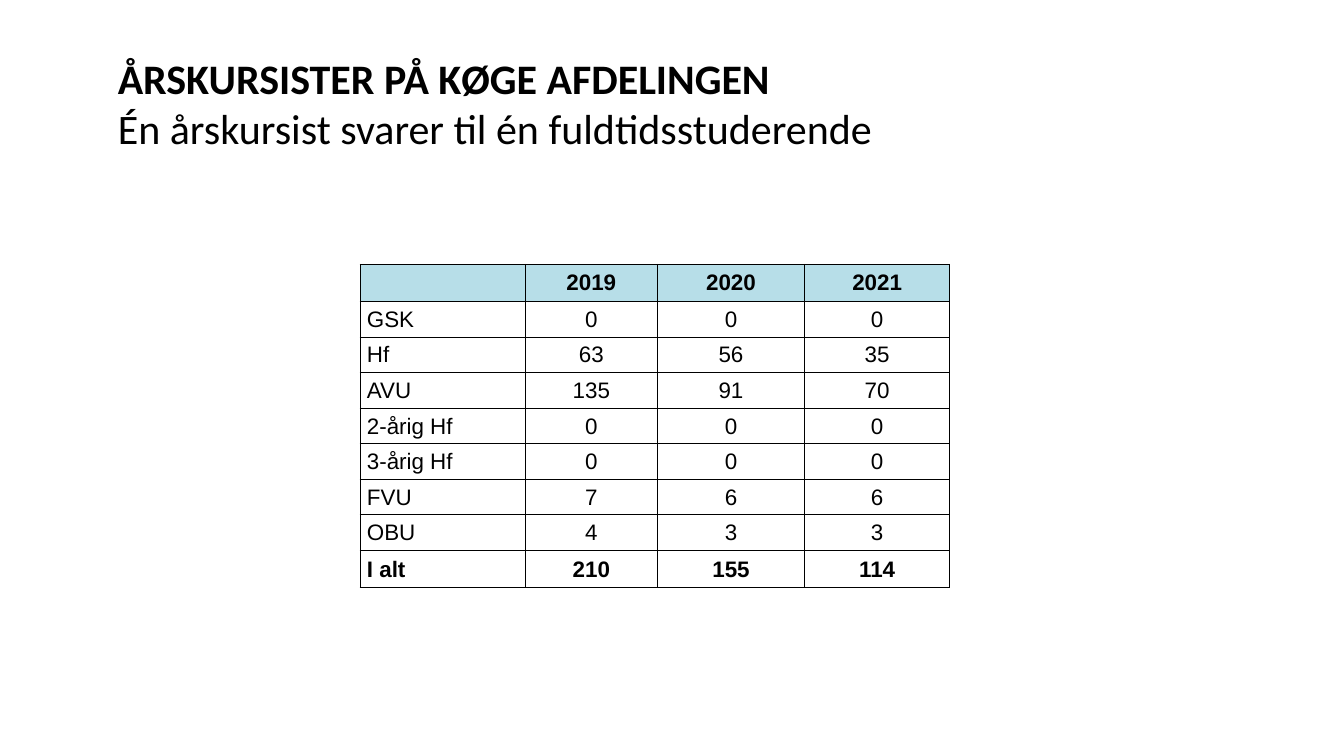
from lxml.etree import SubElement
from pptx import Presentation
from pptx.dml.color import RGBColor
from pptx.enum.text import MSO_ANCHOR as Anchor, MSO_AUTO_SIZE as AutoSize, PP_ALIGN as Align
from pptx.oxml import parse_xml
from pptx.oxml.ns import nsdecls, qn
from pptx.util import Inches, Pt

# Content
HEADING = [("ÅRSKURSISTER PÅ KØGE AFDELINGEN", True),
           ("Én årskursist svarer til én fuldtidsstuderende", False)]
STUDENTS = [
    ("", "2019", "2020", "2021"),
    ("GSK", 0, 0, 0),
    ("Hf", 63, 56, 35),
    ("AVU", 135, 91, 70),
    ("2-årig Hf", 0, 0, 0),
    ("3-årig Hf", 0, 0, 0),
    ("FVU", 7, 6, 6),
    ("OBU", 4, 3, 3),
    ("I alt", 210, 155, 114),
]

# Layout in inches
HEADING_BOX = (1.07, 0.47, 8.36, 1.11)
TABLE_LEFT, TABLE_TOP, TABLE_HEIGHT = 3.57, 2.62, 3.21
COLUMNS = (1.64, 1.31, 1.46, 1.44)
OUTER_ROW = 0.37
BLACK, HEADER_BLUE = "000000", "B7DEE8"


def color(hex_code):
    return RGBColor.from_string(hex_code)


def add_run(paragraph, text, font_name, size, bold):
    run = paragraph.add_run()
    run.text = text
    run.font.name, run.font.size, run.font.bold = font_name, Pt(size), bold
    run.font.color.rgb = color(BLACK)


def add_borders(cell):
    properties = cell._tc.get_or_add_tcPr()
    for position, side in enumerate(("lnL", "lnR", "lnT", "lnB")):
        line = parse_xml(f'<a:{side} {nsdecls("a")} w="{Pt(0.5)}"/>')
        fill = SubElement(line, qn("a:solidFill"))
        SubElement(fill, qn("a:srgbClr"), val=BLACK)
        properties.insert(position, line)


def add_heading(slide):
    frame = slide.shapes.add_textbox(*map(Inches, HEADING_BOX)).text_frame
    frame.word_wrap = True
    frame.auto_size = AutoSize.SHAPE_TO_FIT_TEXT
    for index, (text, bold) in enumerate(HEADING):
        paragraph = frame.add_paragraph() if index else frame.paragraphs[0]
        add_run(paragraph, text, "Calibri", 30, bold)


def fill_cell(cell, text, is_header, is_label, bold):
    cell.vertical_anchor = Anchor.MIDDLE
    cell.margin_left = Inches(0.07 if is_label else 0.01)
    cell.margin_right = cell.margin_top = Inches(0.01)
    cell.margin_bottom = 0
    if is_header:
        cell.fill.solid()
        cell.fill.fore_color.rgb = color(HEADER_BLUE)
    else:
        cell.fill.background()
    add_borders(cell)
    paragraph = cell.text_frame.paragraphs[0]
    paragraph.alignment = Align.LEFT if is_label else Align.CENTER
    if text:
        add_run(paragraph, text, "Arial", 16, bold)


def add_student_table(slide):
    last = len(STUDENTS) - 1
    inner_row = (TABLE_HEIGHT - 2 * OUTER_ROW) / (last - 1)
    table = slide.shapes.add_table(
        len(STUDENTS), len(COLUMNS), Inches(TABLE_LEFT), Inches(TABLE_TOP),
        Inches(sum(COLUMNS)), Inches(TABLE_HEIGHT)).table
    table.first_row = table.horz_banding = False
    for column, width in zip(table.columns, COLUMNS):
        column.width = Inches(width)
    for r, values in enumerate(STUDENTS):
        is_outer = r in (0, last)
        table.rows[r].height = Inches(OUTER_ROW if is_outer else inner_row)
        for c, value in enumerate(values):
            fill_cell(table.cell(r, c), str(value), r == 0, c == 0, is_outer)


def main():
    deck = Presentation()
    deck.slide_width, deck.slide_height = Inches(13.33), Inches(7.5)
    slide = deck.slides.add_slide(deck.slide_layouts[6])
    add_heading(slide)
    add_student_table(slide)
    deck.save("out.pptx")


if __name__ == "__main__":
    main()
